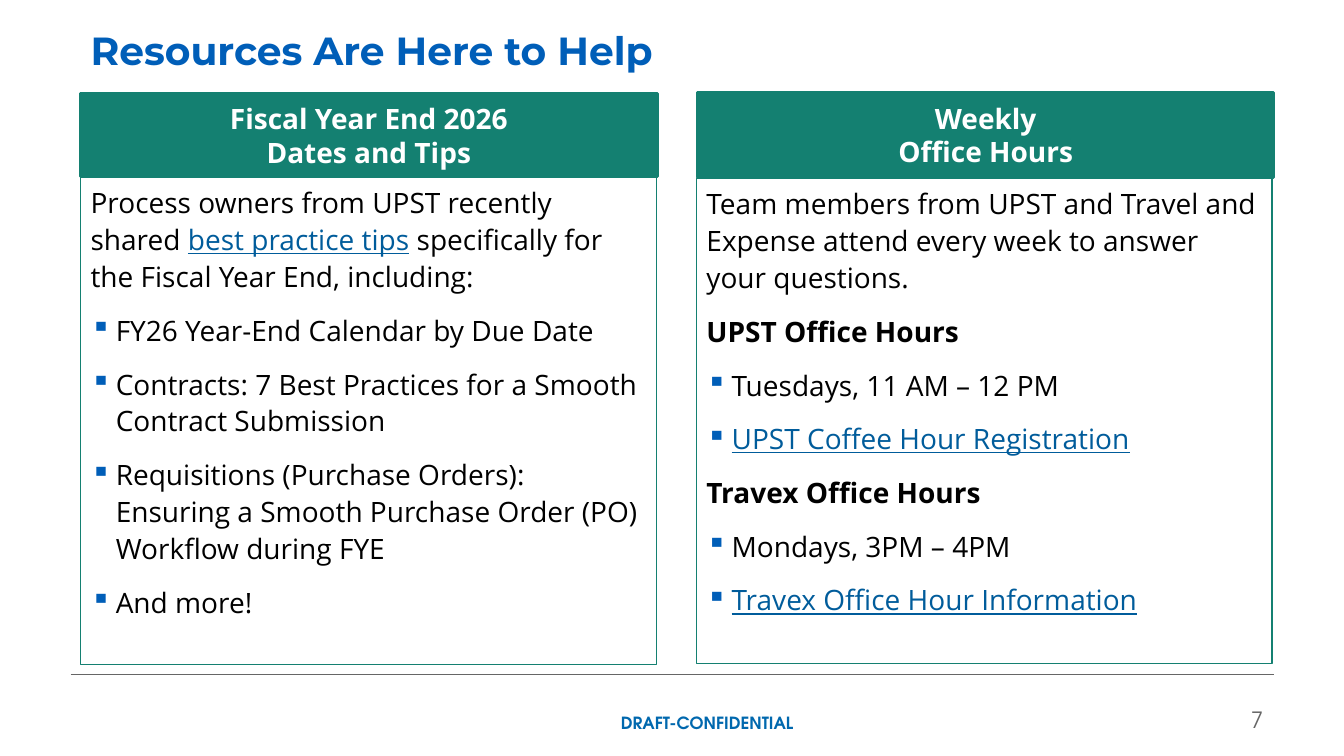
"""Build the slide that lists year-end resources and weekly office hours."""
from lxml import etree
from pptx import Presentation
from pptx.dml.color import RGBColor
from pptx.enum.shapes import MSO_CONNECTOR, MSO_SHAPE
from pptx.enum.text import MSO_ANCHOR, MSO_AUTO_SIZE, PP_ALIGN
from pptx.oxml.ns import qn
from pptx.util import Pt

STRAIGHT, RECTANGLE = MSO_CONNECTOR.STRAIGHT, MSO_SHAPE.RECTANGLE
TOP, MIDDLE = MSO_ANCHOR.TOP, MSO_ANCHOR.MIDDLE
LEFT, CENTER, RIGHT = PP_ALIGN.LEFT, PP_ALIGN.CENTER, PP_ALIGN.RIGHT
NO_FIT = MSO_AUTO_SIZE.NONE

BLUE, GREEN, GRAY = "005EB8", "148071", "666666"
BLACK, WHITE, LINK, FOOTER_BLUE = "000000", "FFFFFF", "005C9B", "0068AE"
TITLE_FONT, BODY_FONT, FOOTER_FONT = "Montserrat", "Open Sans", "TeX Gyre Adventor"

STYLES = {
    "plain": {"color": BLACK},
    "bold": {"color": BLACK, "bold": True},
    "link": {"color": LINK, "underline": True},
}

TITLE = "Resources Are Here to Help"
PANELS = [
    {
        "heading": ["Fiscal Year End 2026", "Dates and Tips"],
        "heading_box": (57.6, 67, 411.8, 59),
        "body_box": (57.6, 126.7, 411.1, 347.8),
        "body": [
            (False, [("Process owners from UPST recently shared ", "plain"),
                     ("best practice tips", "link"),
                     (" specifically for the Fiscal Year End, including:", "plain")]),
            (True, [("FY26 Year-End Calendar by Due Date", "plain")]),
            (True, [("Contracts: 7 Best Practices for a Smooth Contract Submission", "plain")]),
            (True, [("Requisitions (Purchase Orders): Ensuring a Smooth Purchase Order (PO) "
                     "Workflow during FYE", "plain")]),
            (True, [("And more!", "plain")]),
        ],
    },
    {
        "heading": ["Weekly", "Office Hours"],
        "heading_box": (498.2, 66.2, 411.8, 60.5),
        "body_box": (497.5, 127.4, 411.1, 346.3),
        "body": [
            (False, [("Team members from UPST and Travel and Expense attend every week "
                      "to answer your questions.", "plain")]),
            (False, [("UPST Office Hours", "bold")]),
            (True, [("Tuesdays, 11 AM – 12 PM", "plain")]),
            (True, [("UPST Coffee Hour Registration", "link")]),
            (False, [("Travex Office Hours", "bold")]),
            (True, [("Mondays, 3PM – 4PM", "plain")]),
            (True, [("Travex Office Hour Information", "link")]),
        ],
    },
]
FOOTERS = [
    ("DRAFT-CONFIDENTIAL", (365.8, 505.4, 208.1, 18), 12, FOOTER_BLUE, True, TOP),
    ("7", (837.4, 504, 72, 20.2), 16, GRAY, False, MIDDLE),
]


def rgb(value):
    return RGBColor.from_string(value)


def points(box):
    return [Pt(value) for value in box]


def add_run(paragraph, text, font, size, color, bold=False, underline=False):
    run = paragraph.add_run()
    run.text = text
    run.font.name = font
    run.font.size = Pt(size)
    run.font.color.rgb = rgb(color)
    run.font.bold = bold
    run.font.underline = underline


def prepare_frame(shape, anchor):
    frame = shape.text_frame
    frame.auto_size = NO_FIT
    frame.word_wrap = True
    frame.vertical_anchor = anchor
    return frame


def paragraphs_for(frame, items):
    for index, item in enumerate(items):
        yield (frame.add_paragraph() if index else frame.paragraphs[0]), item


def add_bullet(paragraph):
    properties = paragraph._p.get_or_add_pPr()
    properties.set("marL", str(Pt(18)))
    properties.set("indent", str(Pt(-18)))
    bullet_color = etree.SubElement(properties, qn("a:buClr"))
    etree.SubElement(bullet_color, qn("a:srgbClr"), val=BLUE)
    etree.SubElement(properties, qn("a:buChar"), char="▪")


def add_rectangle(slide, box, line_width, fill=None):
    shape = slide.shapes.add_shape(RECTANGLE, *points(box))
    shape.shadow.inherit = False
    if fill:
        shape.fill.solid()
        shape.fill.fore_color.rgb = rgb(fill)
    else:
        shape.fill.background()
    shape.line.color.rgb = rgb(GREEN)
    shape.line.width = Pt(line_width)
    return shape


def add_panel(slide, panel):
    heading = add_rectangle(slide, panel["heading_box"], 2.25, GREEN)
    frame = prepare_frame(heading, MIDDLE)
    for paragraph, text in paragraphs_for(frame, panel["heading"]):
        paragraph.alignment = CENTER
        add_run(paragraph, text, BODY_FONT, 20, WHITE, bold=True)

    body = add_rectangle(slide, panel["body_box"], 0.75)
    frame = prepare_frame(body, TOP)
    for paragraph, (bulleted, runs) in paragraphs_for(frame, panel["body"]):
        paragraph.alignment = LEFT
        paragraph.line_spacing = 1.1
        paragraph.space_after = Pt(12)
        if bulleted:
            add_bullet(paragraph)
        for text, style in runs:
            add_run(paragraph, text, BODY_FONT, 20, **STYLES[style])


def add_title(slide):
    title = slide.shapes.title
    title.left, title.top, title.width, title.height = points((57.6, 7.9, 851, 59.8))
    paragraph = prepare_frame(title, MIDDLE).paragraphs[0]
    paragraph.alignment = LEFT
    paragraph.line_spacing = 0.9
    add_run(paragraph, TITLE, TITLE_FONT, 28, BLUE, bold=True)


def add_footer(slide):
    rule = slide.shapes.add_connector(STRAIGHT, *points((50.4, 481.7, 910.1, 481.7)))
    rule.line.color.rgb = rgb(GRAY)
    rule.line.width = Pt(0.5)
    etree.SubElement(rule._element.spPr, qn("a:effectLst"))
    for text, box, size, color, bold, anchor in FOOTERS:
        text_box = slide.shapes.add_textbox(*points(box))
        paragraph = prepare_frame(text_box, anchor).paragraphs[0]
        paragraph.alignment = RIGHT
        add_run(paragraph, text, FOOTER_FONT, size, color, bold)


def main():
    presentation = Presentation()
    presentation.slide_width, presentation.slide_height = Pt(960), Pt(540)
    slide = presentation.slides.add_slide(presentation.slide_layouts[5])
    add_title(slide)
    for panel in PANELS:
        add_panel(slide, panel)
    add_footer(slide)
    presentation.save("out.pptx")


if __name__ == "__main__":
    main()
